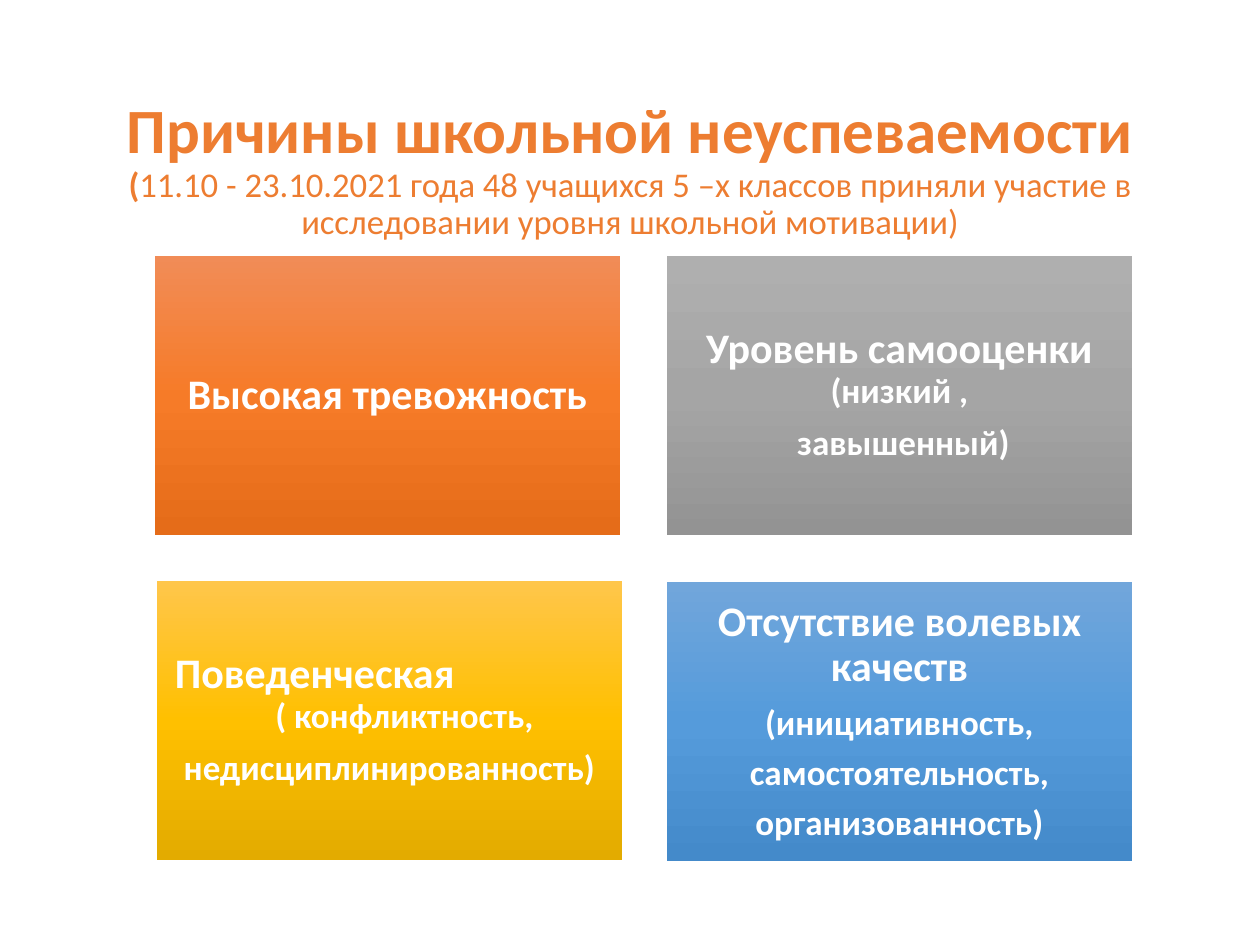
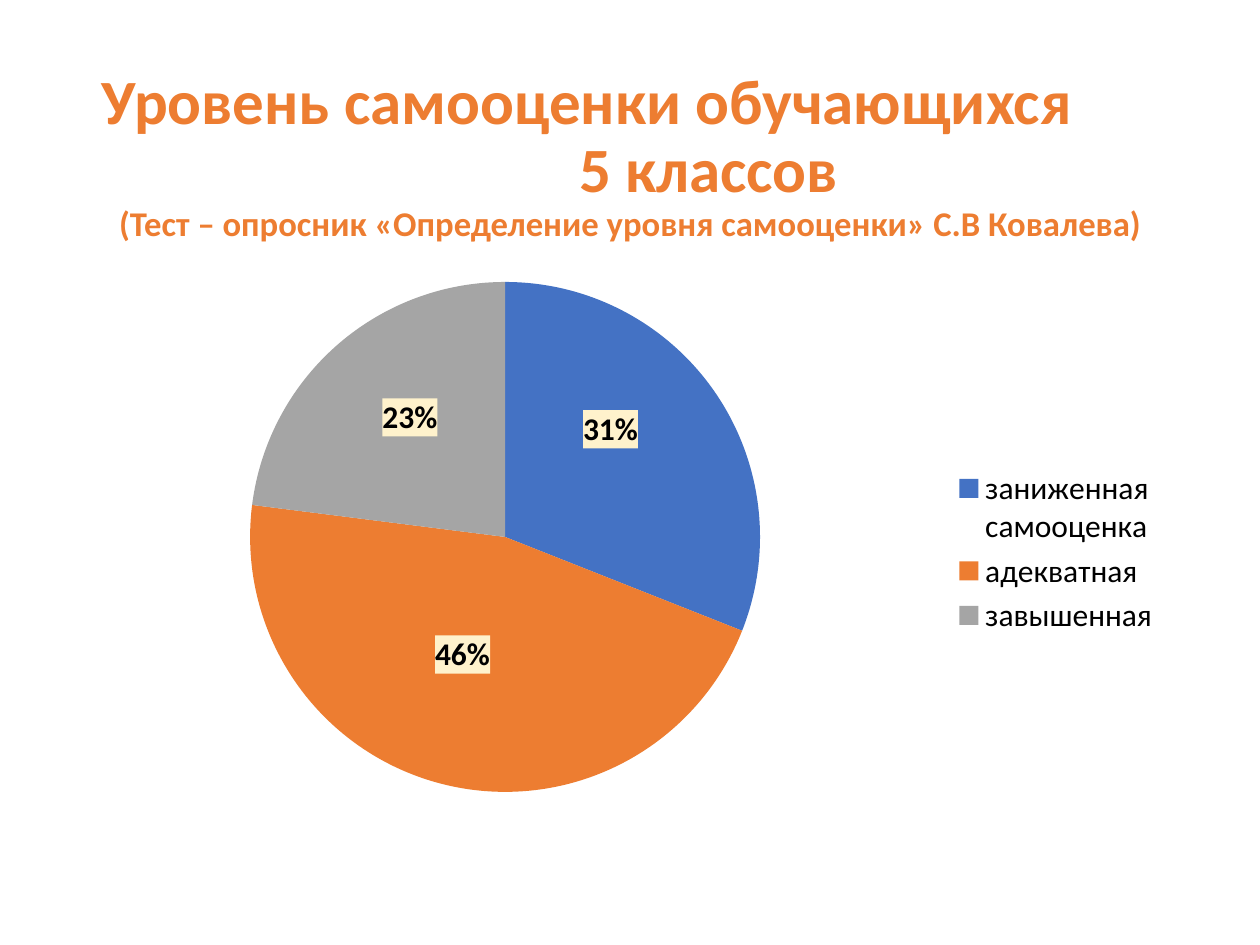
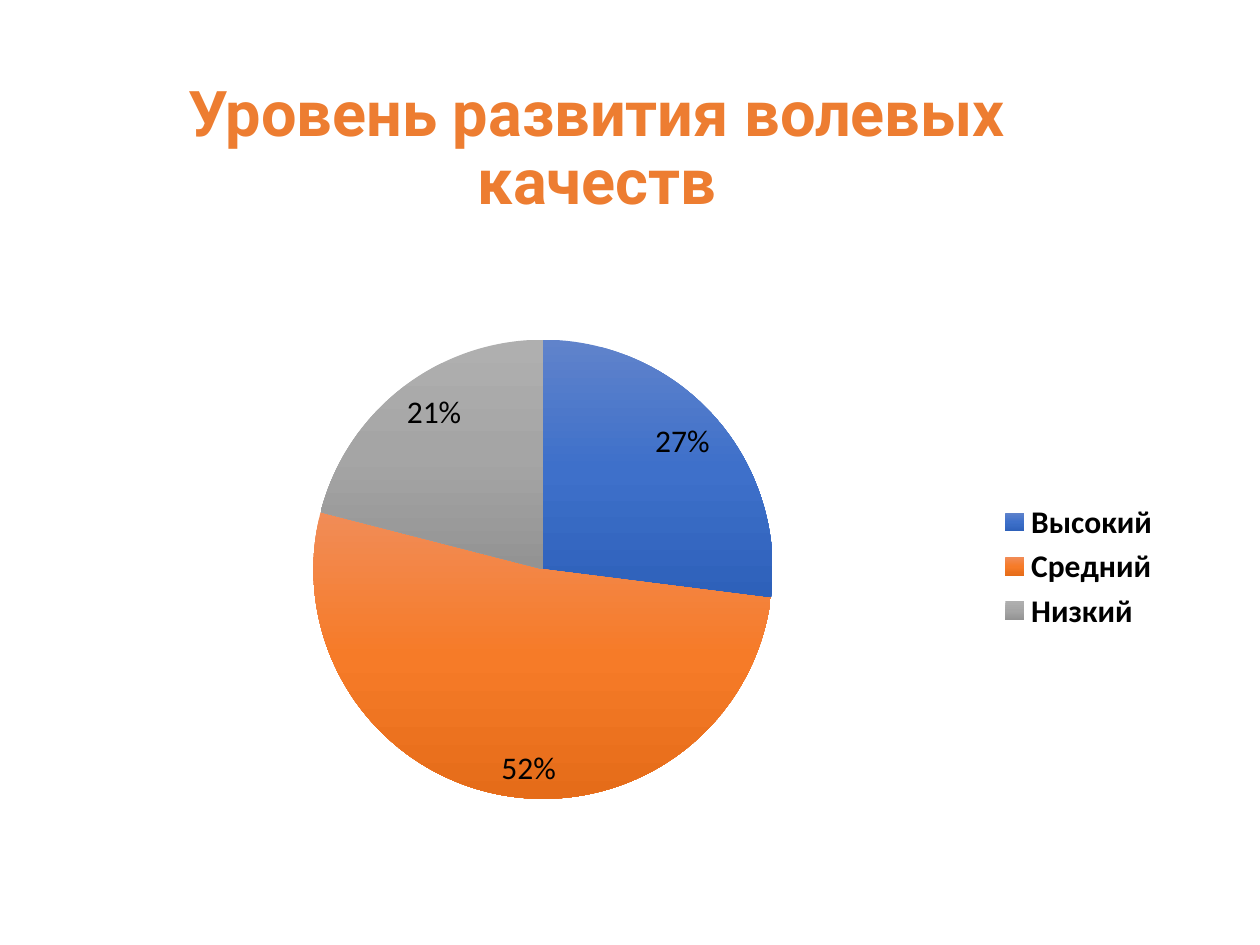
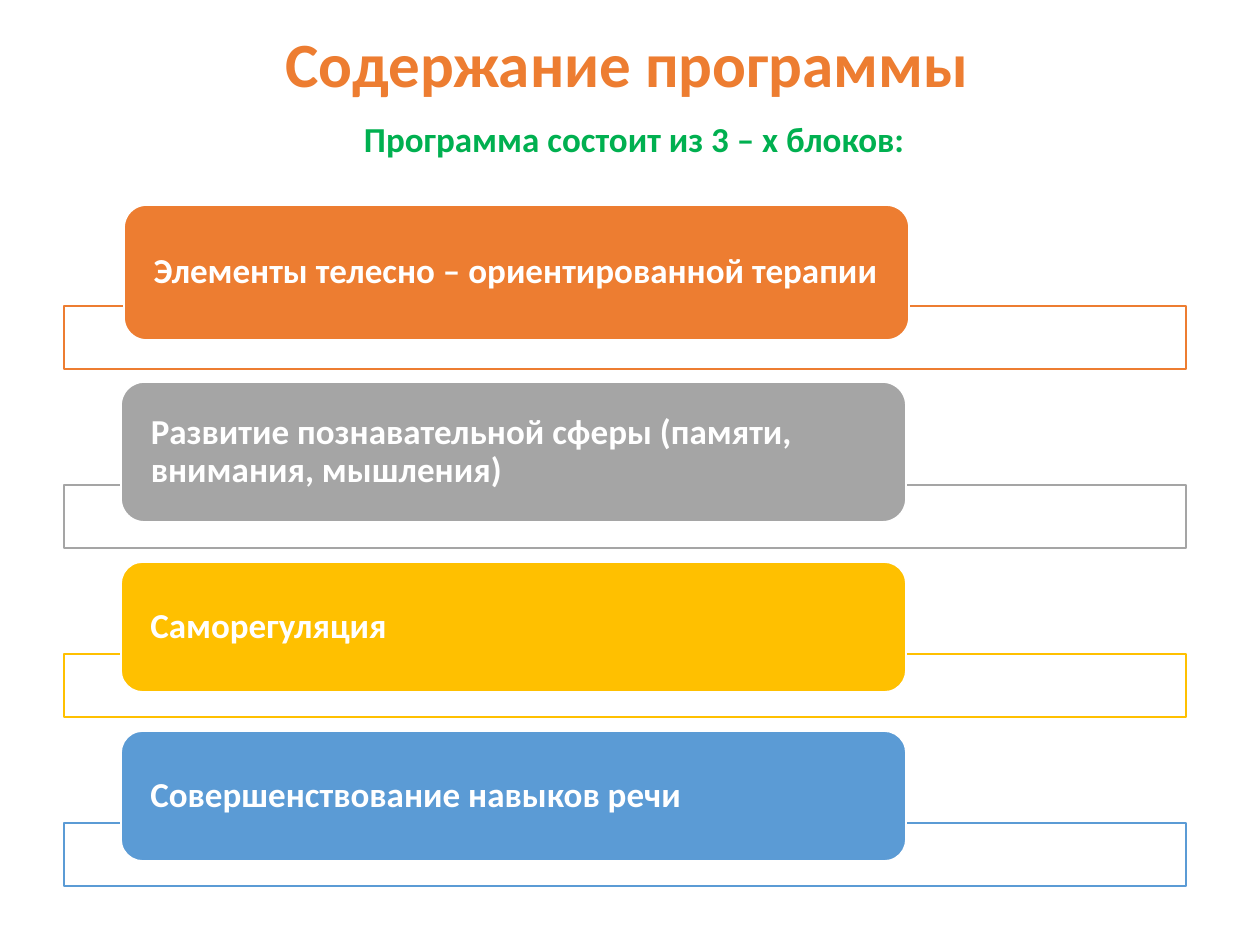
import copy
from lxml import etree
from pptx import Presentation
from pptx.chart.data import CategoryChartData
from pptx.dml.color import RGBColor
from pptx.enum import chart as kinds, shapes, text
from pptx.oxml import parse_xml
from pptx.oxml.ns import nsdecls, qn

# Colours
WHITE = RGBColor(0xFF, 0xFF, 0xFF)
BLACK = RGBColor(0x00, 0x00, 0x00)
ORANGE = RGBColor(0xED, 0x7D, 0x31)
GREY = RGBColor(0xA5, 0xA5, 0xA5)
GOLD = RGBColor(0xFF, 0xC0, 0x00)
SKY = RGBColor(0x5B, 0x9B, 0xD5)
BLUE = RGBColor(0x44, 0x72, 0xC4)
GREEN = RGBColor(0x00, 0xB0, 0x50)

# Gradients: top, middle, bottom
ORANGES = (RGBColor(0xF1, 0x8C, 0x57), RGBColor(0xF6, 0x7B, 0x28), RGBColor(0xE5, 0x6C, 0x19))
GREYS = (RGBColor(0xAF, 0xAF, 0xAF), GREY, RGBColor(0x93, 0x93, 0x93))
GOLDS = (RGBColor(0xFF, 0xC6, 0x4B), GOLD, RGBColor(0xE3, 0xAB, 0x00))
SKIES = (RGBColor(0x71, 0xA6, 0xDB), RGBColor(0x55, 0x9B, 0xDB), RGBColor(0x44, 0x8A, 0xCA))
BLUES = (RGBColor(0x60, 0x83, 0xCB), RGBColor(0x3E, 0x70, 0xCA), RGBColor(0x2E, 0x61, 0xBA))

FONT = "Calibri"
LEFT, MID = text.PP_ALIGN.LEFT, text.PP_ALIGN.CENTER
TOP, CENTRE = text.MSO_ANCHOR.TOP, text.MSO_ANCHOR.MIDDLE
RECT, ROUND = shapes.MSO_SHAPE.RECTANGLE, shapes.MSO_SHAPE.ROUNDED_RECTANGLE
SCALE = 914400 / 126


def px(n):
    return round(n * SCALE)


def write(frame, words, size=20, color=WHITE, bold=True, font=FONT,
          align=MID, after=0, indent=0, join=False):
    """Add a paragraph, or a run to the last one when join is set."""
    para = frame.paragraphs[-1]
    if not join:
        if para.runs:
            para = frame.add_paragraph()
        para.alignment, para.line_spacing = align, 0.9
        para.space_before, para.space_after = 0, round(after * 12700)
        ppr = para._p.get_or_add_pPr()
        ppr.set("marL", str(px(indent)))
        ppr.set("indent", "0")
    run = para.add_run()
    run.text = words
    face = run.font
    face.size, face.bold, face.name = round(size * 12700), bold, font
    face.color.rgb = color


def setup(frame, anchor=CENTRE, sides=(13, 6, 13, 6)):
    frame.word_wrap = True
    frame.auto_size = text.MSO_AUTO_SIZE.NONE
    frame.vertical_anchor = anchor
    (frame.margin_left, frame.margin_top,
     frame.margin_right, frame.margin_bottom) = map(px, sides)
    return frame


def place(item, box):
    item.left, item.top, item.width, item.height = map(px, box)


def start(deck, box, anchor=CENTRE, top=6):
    """Add a title-only slide; return it with its title frame."""
    slide = deck.slides.add_slide(deck.slide_layouts[5])
    place(slide.shapes.title, box)
    return slide, setup(slide.shapes.title.text_frame, anchor, (13, top, 13, 6))


def shade(fill, part, tones):
    """Fill with three tones from top to bottom."""
    fill.gradient()
    fill.gradient_angle = 270
    stops = next(part.iter(qn("a:gsLst")))
    middle = copy.deepcopy(stops[0])
    middle.set("pos", "50000")
    stops.insert(1, middle)
    for stop, tone in zip(fill.gradient_stops, tones):
        stop.color.rgb = tone


def block(slide, kind, box):
    shape = slide.shapes.add_shape(kind, *map(px, box))
    shape.shadow.inherit = False
    return shape


def card(slide, x, y, tones, lines):
    shape = block(slide, RECT, (x, y, 465, 279))
    shape.line.fill.background()
    shade(shape.fill, shape._element, tones)
    frame = setup(shape.text_frame, sides=(13, 13, 13, 13))
    for words, look in lines:
        write(frame, words, **look)


def pie(slide, box, plot, names, vals):
    """Add a pie chart with its legend; return its chart and series."""
    data = CategoryChartData(number_format="0%")
    data.categories = names
    data.add_series("Series 1", vals)
    chart = slide.shapes.add_chart(kinds.XL_CHART_TYPE.PIE, *map(px, box), data).chart
    chart.has_title = False
    chart.font.size, chart.font.name = px(31.5), FONT
    chart.font.color.rgb = BLACK
    chart.has_legend = True
    chart.legend.position = kinds.XL_LEGEND_POSITION.RIGHT
    chart.legend.include_in_layout = False
    chart.plots[0].vary_by_categories = True

    # Inner plot area as fractions of the chart
    area = chart._chartSpace.find(".//" + qn("c:plotArea"))
    for old in area.findall(qn("c:layout")):
        area.remove(old)
    area.insert(0, layout(plot, inner=True))
    return chart, chart.plots[0].series[0]


def layout(spots, inner=False):
    root = parse_xml(f"<c:layout {nsdecls('c')}><c:manualLayout/></c:layout>")
    rules = [("layoutTarget", "inner"), ("xMode", "edge"), ("yMode", "edge")] if inner else []
    for tag, val in rules + list(zip("xywh", spots)):
        etree.SubElement(root[0], qn("c:" + tag)).set("val", str(val))
    return root


def tag(point, shift):
    """Put a bold value on a cream patch, moved from the slice's middle."""
    label = point.data_label
    label.font.bold = True
    label.font.size, label.font.name = px(31.5), FONT
    label.font.color.rgb = BLACK
    label.position = kinds.XL_LABEL_POSITION.CENTER
    return layout(shift), parse_xml(
        f"<c:spPr {nsdecls('c', 'a')}><a:solidFill>"
        '<a:srgbClr val="FFF2CC"/></a:solidFill></c:spPr>')


def causes(deck):
    slide, head = start(deck, (87, 50, 1086, 183), TOP, 49)
    write(head, "Причины школьной неуспеваемости", size=36, color=ORANGE)
    write(head, "(", size=19.8, color=ORANGE)
    write(head, "11.10 - 23.10.2021 года 48 учащихся 5 –х классов приняли участие "
          "в исследовании уровня школьной мотивации)",
          size=19.8, color=ORANGE, bold=False, join=True)

    big, small = dict(size=24, after=8.4), dict(size=20, after=7)
    card(slide, 155, 256, ORANGES, [("Высокая тревожность", big)])
    card(slide, 667, 256, GREYS, [
        ("Уровень самооценки ", big),
        ("(низкий ,", dict(join=True)),
        ("завышенный)", dict(small, indent=8))])
    card(slide, 157, 581, GOLDS, [
        ("Поведенческая", dict(size=24, align=LEFT, indent=5)),
        ("( конфликтность,", dict(after=8.4, indent=30)),
        ("недисциплинированность)", small)])
    card(slide, 667, 582, SKIES, [
        ("Отсутствие волевых качеств", big),
        ("(инициативность,", small),
        ("самостоятельность,", small),
        ("организованность)", small)])


def esteem(deck):
    slide, head = start(deck, (87, 50, 1086, 214))
    write(head, "Уровень самооценки обучающихся", size=36, color=ORANGE, align=LEFT, indent=2)
    write(head, "5 классов", size=36, color=ORANGE, align=LEFT, indent=479)
    write(head, "(Тест – опросник «Определение уровня самооценки» С.В Ковалева)",
          size=19.8, color=ORANGE)

    _, row = pie(slide, (87, 252, 1086, 600), (0.15, 0.05, 0.47, 0.85),
                 ("заниженная самооценка", "адекватная", "завышенная"), (0.31, 0.46, 0.23))
    shifts = ((0, -0.06), (-0.01, -0.01), (-0.01, -0.04))
    for i, (color, shift) in enumerate(zip((BLUE, ORANGE, GREY), shifts)):
        point = row.points[i]
        point.format.fill.solid()
        point.format.fill.fore_color.rgb = color
        spot, patch = tag(point, shift)
        label = row._element.findall(".//" + qn("c:dLbl"))[i]
        label.find(qn("c:idx")).addnext(spot)
        label.find(qn("c:txPr")).addprevious(patch)


def will(deck):
    slide, head = start(deck, (54, 76, 1086, 152), TOP)
    write(head, "Уровень развития волевых качеств", size=36, color=ORANGE, font="Roboto")

    chart, row = pie(slide, (87, 283, 1086, 567), (0.07, 0.1, 0.7, 0.81),
                     ("Высокий", "Средний", "Низкий"), (0.27, 0.52, 0.21))
    legend = chart.legend.font
    legend.bold, legend.size, legend.name = True, px(31.5), FONT
    labels = chart.plots[0]
    labels.has_data_labels = True
    labels = labels.data_labels
    labels.show_value = True
    labels.number_format, labels.number_format_is_linked = "0%", False
    labels.position = kinds.XL_LABEL_POSITION.INSIDE_END
    for i, tones in enumerate((BLUES, ORANGES, GREYS)):
        fill = row.points[i].format.fill
        shade(fill, row._element.findall(qn("c:dPt"))[i], tones)


def strip(slide, x, y, high, base, color, words):
    """One open bar with a filled label over its top edge."""
    bar = block(slide, RECT, (64, base, 1122, 63))
    pill = block(slide, ROUND, (x, y, 785, high))
    for shape, fill, edge in ((bar, WHITE, color), (pill, color, WHITE)):
        shape.fill.solid()
        shape.fill.fore_color.rgb = fill
        shape.line.color.rgb = edge
        shape.line.width = 12700
    frame = setup(pill.text_frame, sides=(23, 0, 13, 0))
    write(frame, words, align=LEFT, after=7)


def content(deck):
    slide, head = start(deck, (84, 0, 1086, 134))
    write(head, "Содержание программы", size=36, color=ORANGE)
    note = slide.shapes.add_textbox(*map(px, (248, 116, 1012, 79)))
    write(setup(note.text_frame, TOP), "Программа состоит из 3 – х блоков:",
          color=GREEN, align=LEFT, indent=103)

    rows = (
        (124, 205, 135, 306, ORANGE, "Элементы телесно – ориентированной терапии"),
        (121, 382, 140, 485, GREY, "Развитие познавательной сферы (памяти, внимания, мышления)"),
        (121, 562, 130, 654, GOLD, "Саморегуляция"),
        (121, 731, 130, 823, SKY, "Совершенствование навыков речи"),
    )
    for row in rows:
        strip(slide, *row)


def main():
    deck = Presentation()
    deck.slide_width, deck.slide_height = px(1260), px(945)
    for make in (causes, esteem, will, content):
        make(deck)
    deck.save("out.pptx")


if __name__ == "__main__":
    main()
